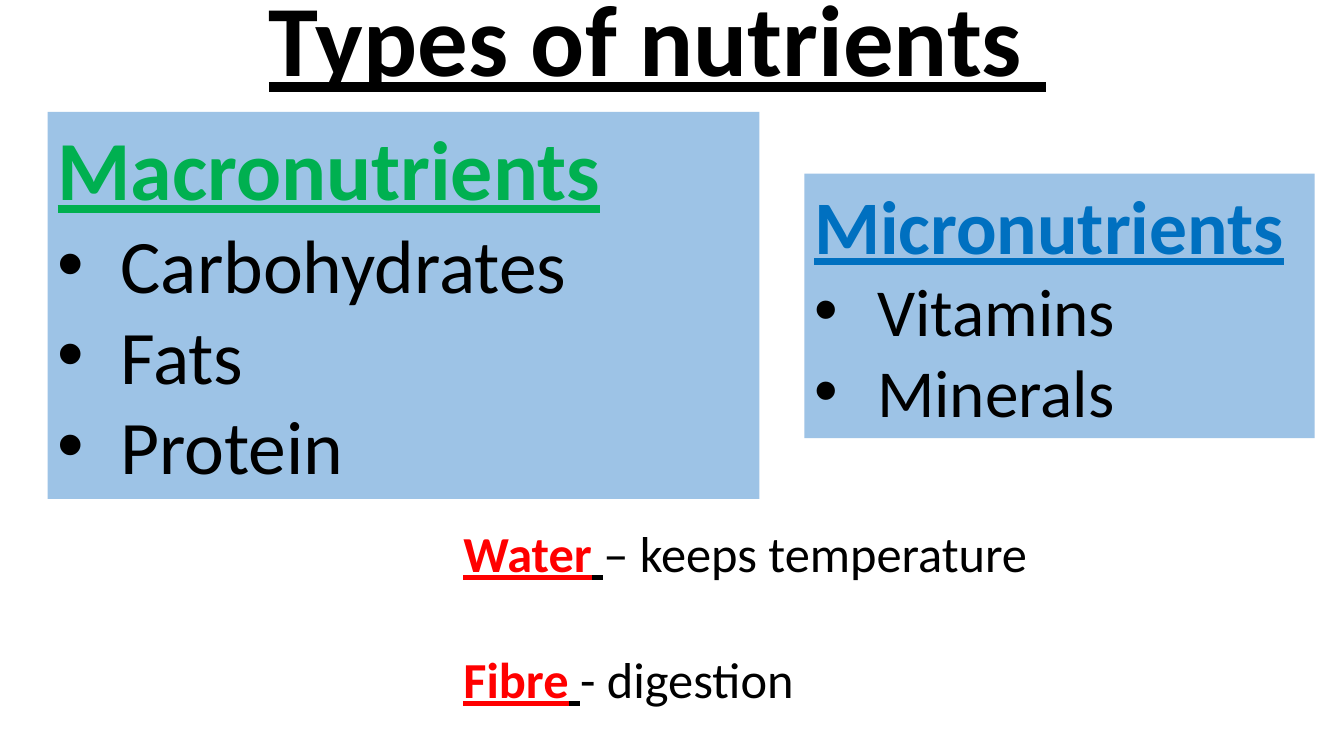
from lxml import etree
from pptx import Presentation
from pptx import util as u
from pptx.dml.color import RGBColor
from pptx.enum import shapes, text
from pptx.oxml.ns import qn

COLOURS = {"ink": "000000", "panel": "9DC3E6", "macro": "00B050",
           "micro": "0070C0", "term": "FF0000"}


class NutrientSlide:
    font = "Calibri"

    def __init__(self, deck):
        self.slide = deck.slides.add_slide(deck.slide_layouts[5])

    def style(self, run, size, colour="ink", strong=False, underline=False):
        run.font.name = self.font
        run.font.size = u.Pt(size)
        run.font.bold = strong
        run.font.underline = underline
        run.font.color.rgb = RGBColor.from_string(COLOURS[colour])

    def indent(self, paragraph, left, first=0):
        props = paragraph._p.get_or_add_pPr()
        props.set("marL", str(u.Pt(left)))
        props.set("indent", str(u.Pt(first)))
        return props

    def title(self, wording, box, size):
        heading = self.slide.shapes.title
        heading.left, heading.top, heading.width, heading.height = map(u.Pt, box)
        frame = heading.text_frame
        frame.text = wording
        frame.auto_size = text.MSO_AUTO_SIZE.NONE
        frame.vertical_anchor = text.MSO_ANCHOR.MIDDLE
        line = frame.paragraphs[0]
        line.alignment = text.PP_ALIGN.CENTER
        line.line_spacing = 0.9
        self.style(line.runs[0], size, strong=True, underline=True)

    def panel(self, heading, items, box, size, colour):
        """Filled box with an underlined heading and bulleted items."""
        panel = self.slide.shapes.add_shape(
            shapes.MSO_SHAPE.RECTANGLE, *map(u.Pt, box))
        panel.shadow.inherit = False
        panel.fill.solid()
        panel.fill.fore_color.rgb = RGBColor.from_string(COLOURS["panel"])
        panel.line.fill.background()
        frame = panel.text_frame
        frame.text = "\n".join([heading, *items])
        frame.word_wrap = True
        frame.vertical_anchor = text.MSO_ANCHOR.TOP
        frame.auto_size = text.MSO_AUTO_SIZE.SHAPE_TO_FIT_TEXT
        for line in frame.paragraphs:
            line.alignment = text.PP_ALIGN.LEFT
        first, *bullets = frame.paragraphs
        self.style(first.runs[0], size, colour, True, True)
        for line in bullets:
            props = self.indent(line, 45, -45)
            etree.SubElement(props, qn("a:buFont")).set("typeface", "Arial")
            etree.SubElement(props, qn("a:buChar")).set("char", "•")
            self.style(line.runs[0], size - 6)

    def roles(self, entries, box, size):
        """Highlighted terms, each followed by its role in the body."""
        notes = self.slide.shapes.add_textbox(*map(u.Pt, box))
        frame = notes.text_frame
        frame.word_wrap = True
        for number, (term, role) in enumerate(entries):
            line = frame.add_paragraph() if number else frame.paragraphs[0]
            self.indent(line, 73.5)
            line.line_spacing = 0.8
            line.space_before = u.Pt(55 if number else 10)
            for wording, look in ((term, ("term", True, True)),
                                  (" ", ("ink", True, True)),
                                  (role, ("ink",))):
                run = line.add_run()
                run.text = wording
                self.style(run, size, *look)


def main():
    deck = Presentation()
    deck.slide_width, deck.slide_height = u.Pt(960), u.Pt(540)
    page = NutrientSlide(deck)

    # Title
    page.title("Types of nutrients ", (145.5, -13.5, 648, 90), 72)

    # Water and fibre
    page.roles([("Water", "– keeps temperature"), ("Fibre", "- digestion")],
               (250.5, 378, 648, 405), 36)

    # Nutrient groups
    page.panel("Macronutrients", ["Carbohydrates", "Fats", "Protein"],
               (34, 80, 508.5, 276.5), 60, "macro")
    page.panel("Micronutrients", ["Vitamins", "Minerals"],
               (574.5, 124, 364.5, 189), 54, "micro")

    deck.save("out.pptx")


if __name__ == "__main__":
    main()
